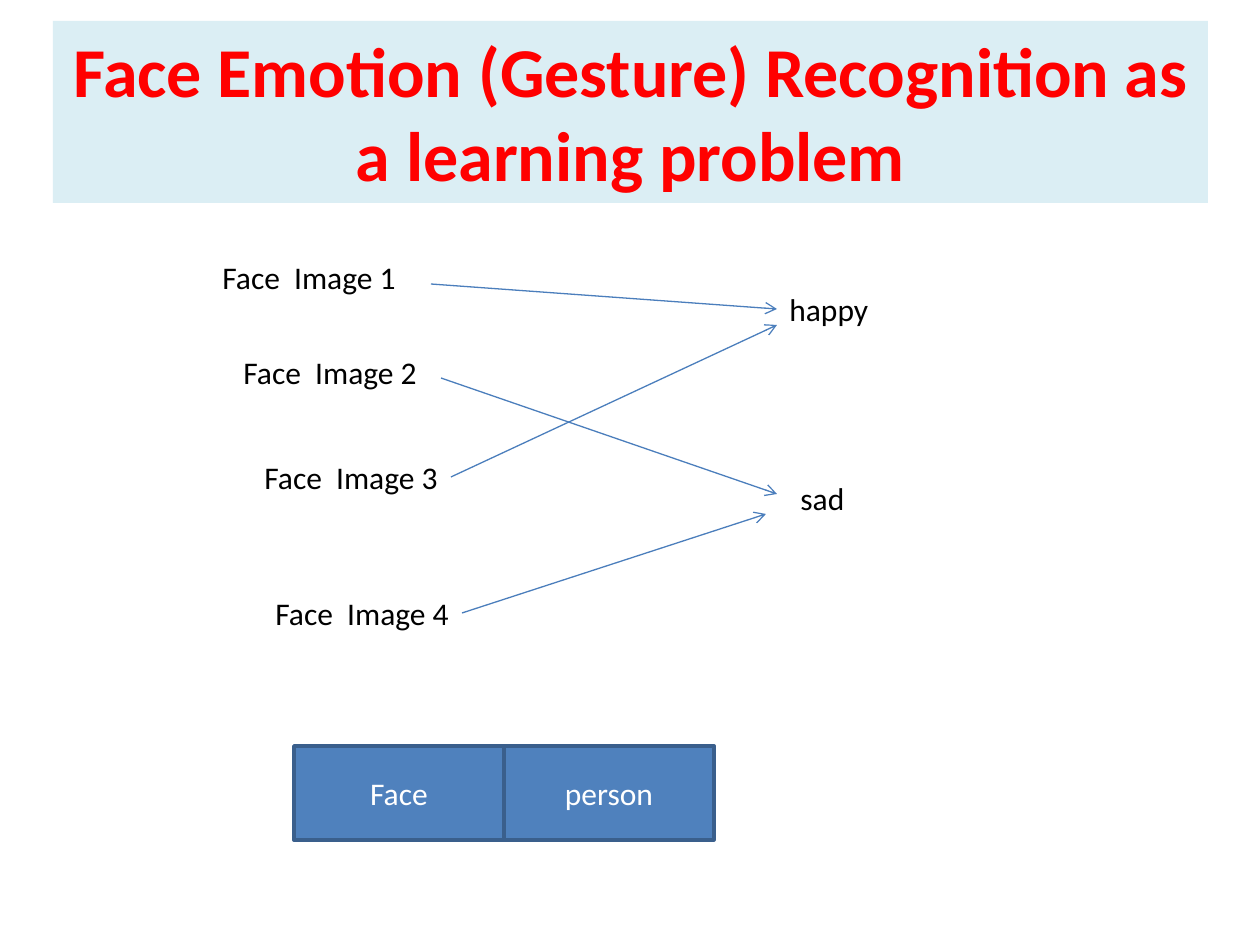
"""Build a slide that maps face images to emotions as a learning problem."""
from lxml.etree import SubElement
from pptx import Presentation
from pptx.dml.color import RGBColor
from pptx.enum.shapes import MSO_CONNECTOR, MSO_SHAPE
from pptx.enum.text import MSO_ANCHOR, PP_ALIGN
from pptx.oxml.ns import qn
from pptx.util import Pt

SCALE = 914400 / 126


def px(*nums):
    return [round(num * SCALE) for num in nums]


def write(shape, text, color, size=18, bold=False, align=PP_ALIGN.LEFT, anchor=MSO_ANCHOR.TOP):
    frame = shape.text_frame
    frame.word_wrap = True
    frame.vertical_anchor = anchor
    para = frame.paragraphs[0]
    para.alignment = align
    run = para.add_run()
    run.text = text
    run.font.name = "Calibri"
    run.font.size = Pt(size)
    run.font.bold = bold
    run.font.color.rgb = RGBColor.from_string(color)


deck = Presentation()
deck.slide_width, deck.slide_height = px(1260, 945)
slide = deck.slides.add_slide(deck.slide_layouts[6])
shapes = slide.shapes

labels = {}
for text, left, top, width in [
    ("Face  Image 1", 210, 252, 199),
    ("Face  Image 2", 231, 347, 199),
    ("Face  Image 3", 252, 452, 199),
    ("Face  Image 4", 263, 588, 199),
    ("happy", 777, 284, 284),
    ("sad", 788, 473, 284),
]:
    labels[text] = shapes.add_textbox(*px(left, top, width, 50))
    write(labels[text], text, "000000")

for ends, start, goal in [
    ((431, 284, 777, 309), None, "happy"),
    ((441, 378, 777, 494), None, None),
    ((451, 477, 777, 325), "Face  Image 3", None),
    ((462, 613, 766, 514), "Face  Image 4", None),
]:
    arrow = shapes.add_connector(MSO_CONNECTOR.STRAIGHT, *px(*ends))
    if start:
        arrow.begin_connect(labels[start], 3)
    if goal:
        arrow.end_connect(labels[goal], 1)
    arrow.line.color.rgb = RGBColor.from_string("4B7EBC")
    arrow.line.width = Pt(0.75)
    SubElement(arrow.line._get_or_add_ln(), qn("a:tailEnd"), type="arrow")
    SubElement(arrow._element.spPr, qn("a:effectLst"))

for col, text in enumerate(["Face", "person"]):
    box = shapes.add_shape(MSO_SHAPE.RECTANGLE, *px(294 + 210 * col, 746, 210, 94))
    box.shadow.inherit = False
    box.fill.solid()
    box.fill.fore_color.rgb = RGBColor.from_string("4F81BD")
    box.line.color.rgb = RGBColor.from_string("3A5F8C")
    box.line.width = Pt(2)
    write(box, text, "FFFFFF", align=PP_ALIGN.CENTER, anchor=MSO_ANCHOR.MIDDLE)

title = shapes.add_textbox(*px(53, 21, 1155, 182))
title.fill.solid()
title.fill.fore_color.rgb = RGBColor.from_string("DBEEF4")
write(title, "Face Emotion (Gesture) Recognition as a learning problem", "FF0000",
      size=40, bold=True, align=PP_ALIGN.CENTER)

deck.save("out.pptx")
